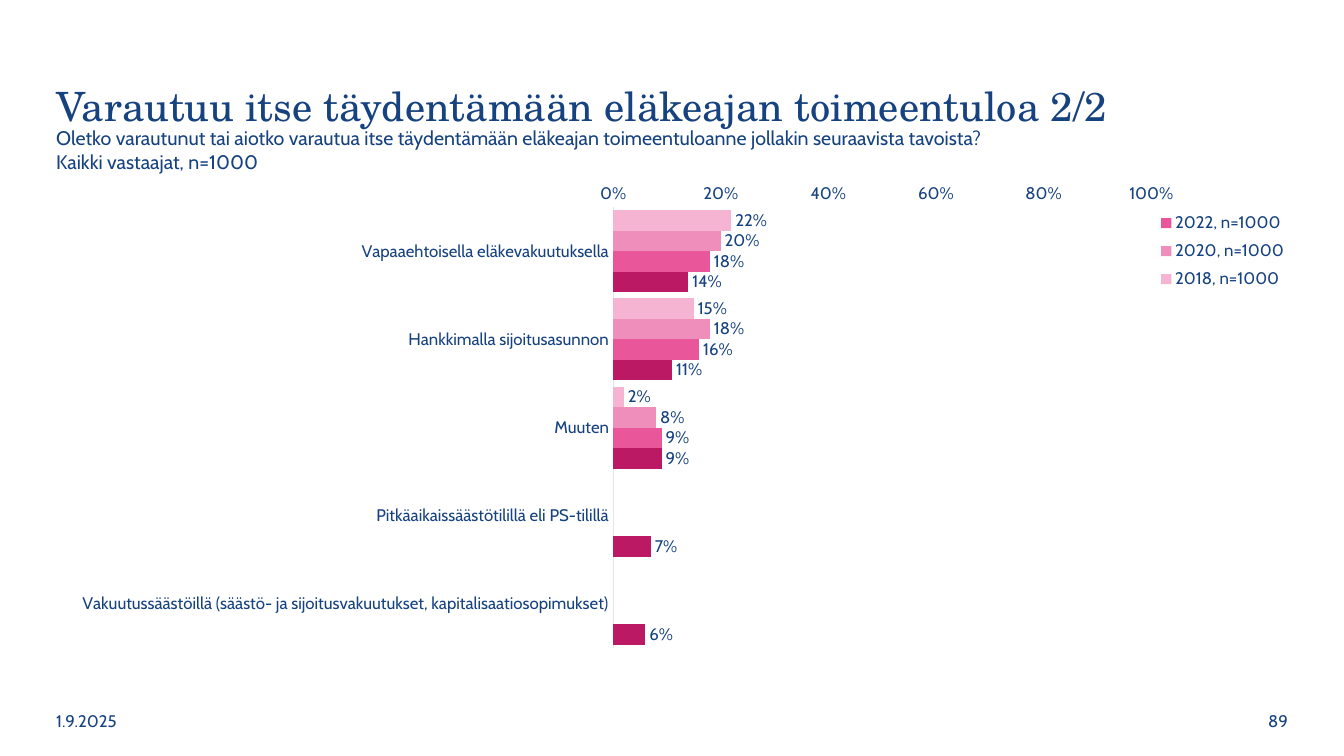
from dataclasses import dataclass

from lxml.etree import SubElement
from pptx import Presentation
from pptx.chart.data import CategoryChartData
from pptx.dml.color import RGBColor
from pptx.enum.chart import (XL_AXIS_CROSSES, XL_CHART_TYPE, XL_LABEL_POSITION,
                             XL_LEGEND_POSITION, XL_TICK_MARK)
from pptx.enum.text import MSO_ANCHOR, PP_ALIGN
from pptx.oxml import parse_xml
from pptx.oxml.ns import nsdecls, qn
from pptx.util import Pt

TITLE = "Varautuu itse täydentämään eläkeajan toimeentuloa 2/2"
QUESTION = [
    "Oletko varautunut tai aiotko varautua itse täydentämään eläkeajan "
    "toimeentuloanne jollakin seuraavista tavoista?",
    "Kaikki vastaajat, n=1000",
]
DATE = "1.9.2025"
PAGE_NUMBER = "89"
CATEGORIES = [
    "Vapaaehtoisella eläkevakuutuksella",
    "Hankkimalla sijoitusasunnon",
    "Muuten",
    "Pitkäaikaissäästötilillä eli PS-tilillä",
    "Vakuutussäästöillä (säästö- ja sijoitusvakuutukset, kapitalisaatiosopimukset)",
]
SERIES = [
    ("2018, n=1000", (0.22, 0.15, 0.02, None, None), "F5B4D2"),
    ("2020, n=1000", (0.20, 0.18, 0.08, None, None), "F08EBB"),
    ("2022, n=1000", (0.18, 0.16, 0.09, None, None), "E9569A"),
    ("2025, n=1000", (0.14, 0.11, 0.09, 0.07, 0.06), "BC1964"),
]
HIDDEN_LEGEND_ENTRY = 0


@dataclass(frozen=True)
class Theme:
    ink: str = "164280"
    axis: str = "E6E6E6"
    heading_font: str = "TeX Gyre Schola"
    body_font: str = "Cabin"
    title_size: float = 28.8
    question_size: float = 14
    small_size: float = 12


THEME = Theme()
PAGE_WIDTH, PAGE_HEIGHT = 960, 540
MARGIN = 33
CONTENT_WIDTH = PAGE_WIDTH - 2 * MARGIN
FOOTER_TOP, FOOTER_WIDTH, FOOTER_HEIGHT = 500.4, 85, 28.8
PLOT_AREA = (0.453, 0.074, 0.43, 0.863)
LEGEND_AREA = (0.887, 0.07, 0.106, 0.18)


def style_font(font, size, name=THEME.body_font):
    font.size = Pt(size)
    font.name = name
    font.color.rgb = RGBColor.from_string(THEME.ink)


def write_lines(frame, lines, size, name=THEME.body_font, align=PP_ALIGN.LEFT):
    frame.word_wrap = True
    for index, line in enumerate(lines):
        para = frame.add_paragraph() if index else frame.paragraphs[0]
        para.alignment = align
        span = para.add_run()
        span.text = line
        style_font(span.font, size, name)


def add_text(page, area, lines, size, anchor, align=PP_ALIGN.LEFT):
    box = page.shapes.add_textbox(*map(Pt, area))
    box.text_frame.vertical_anchor = anchor
    write_lines(box.text_frame, lines, size, align=align)


def add_title(page):
    title = page.shapes.title
    title.left, title.top, title.width, title.height = map(Pt, (MARGIN, 43.2, 832, 69))
    title.text_frame.vertical_anchor = MSO_ANCHOR.MIDDLE
    write_lines(title.text_frame, [TITLE], THEME.title_size, THEME.heading_font)
    title.text_frame.paragraphs[0].line_spacing = 0.9


def manual_layout(area, inner=False):
    """Return a chart layout element; area is x, y, w, h as shares of the chart."""
    layout = parse_xml(f"<c:layout {nsdecls('c')}><c:manualLayout/></c:layout>")
    settings = [("layoutTarget", "inner")] if inner else []
    settings += [("xMode", "edge"), ("yMode", "edge"), *zip("xywh", area)]
    for tag, value in settings:
        SubElement(layout[0], qn(f"c:{tag}")).set("val", str(value))
    return layout


def format_axes(chart):
    categories, values = chart.category_axis, chart.value_axis
    for axis in (categories, values):
        axis.major_tick_mark = axis.minor_tick_mark = XL_TICK_MARK.NONE
        axis.has_major_gridlines = False
        style_font(axis.tick_labels.font, THEME.small_size)
    categories.reverse_order = True
    categories.crosses = XL_AXIS_CROSSES.MAXIMUM
    categories.format.line.color.rgb = RGBColor.from_string(THEME.axis)
    categories.format.line.width = Pt(0.75)
    values.minimum_scale, values.maximum_scale, values.major_unit = 0, 1, 0.2
    values.format.line.fill.background()
    values.tick_labels.number_format = "0%"
    values.tick_labels.number_format_is_linked = False


def format_bars(plot):
    plot.gap_width, plot.overlap = 30, 0
    plot.vary_by_categories = False
    for series, (_, _, color) in zip(plot.series, SERIES):
        series.format.fill.solid()
        series.format.fill.fore_color.rgb = RGBColor.from_string(color)
        series.invert_if_negative = False
        labels = series.data_labels
        labels.show_value = True
        labels.number_format, labels.number_format_is_linked = "0%", False
        labels.position = XL_LABEL_POSITION.OUTSIDE_END
        style_font(labels.font, THEME.small_size)


def format_legend(chart):
    chart.has_legend = True
    legend = chart.legend
    legend.position = XL_LEGEND_POSITION.RIGHT
    legend.include_in_layout = False
    style_font(legend.font, THEME.small_size)
    element = legend._element
    for old in element.findall(qn("c:layout")):
        element.remove(old)
    entry = parse_xml(f'<c:legendEntry {nsdecls("c")}><c:idx val="{HIDDEN_LEGEND_ENTRY}"/>'
                      '<c:delete val="1"/></c:legendEntry>')
    element.find(qn("c:legendPos")).addnext(entry)
    entry.addnext(manual_layout(LEGEND_AREA))


def add_bar_chart(page):
    data = CategoryChartData(number_format="0%")
    data.categories = CATEGORIES
    for name, values, _ in SERIES:
        data.add_series(name, values)
    area = map(Pt, (MARGIN, 121, CONTENT_WIDTH, 365))
    chart = page.shapes.add_chart(XL_CHART_TYPE.BAR_CLUSTERED, *area, data).chart
    chart.has_title = False
    style_font(chart.font, THEME.small_size)
    format_axes(chart)
    format_bars(chart.plots[0])
    format_legend(chart)
    plot_area = chart._chartSpace.chart.plotArea
    for old in plot_area.findall(qn("c:layout")):
        plot_area.remove(old)
    plot_area.insert(0, manual_layout(PLOT_AREA, inner=True))


def main():
    deck = Presentation()
    deck.slide_width, deck.slide_height = Pt(PAGE_WIDTH), Pt(PAGE_HEIGHT)
    page = deck.slides.add_slide(deck.slide_layouts[5])
    add_title(page)
    add_text(page, (MARGIN, 86.4, 873, 41), QUESTION, THEME.question_size, MSO_ANCHOR.TOP)
    add_bar_chart(page)
    number_left = PAGE_WIDTH - MARGIN - FOOTER_WIDTH
    for left, line, align in ((MARGIN, DATE, PP_ALIGN.LEFT),
                              (number_left, PAGE_NUMBER, PP_ALIGN.RIGHT)):
        add_text(page, (left, FOOTER_TOP, FOOTER_WIDTH, FOOTER_HEIGHT), [line],
                 THEME.small_size, MSO_ANCHOR.MIDDLE, align)
    deck.save("out.pptx")


if __name__ == "__main__":
    main()
